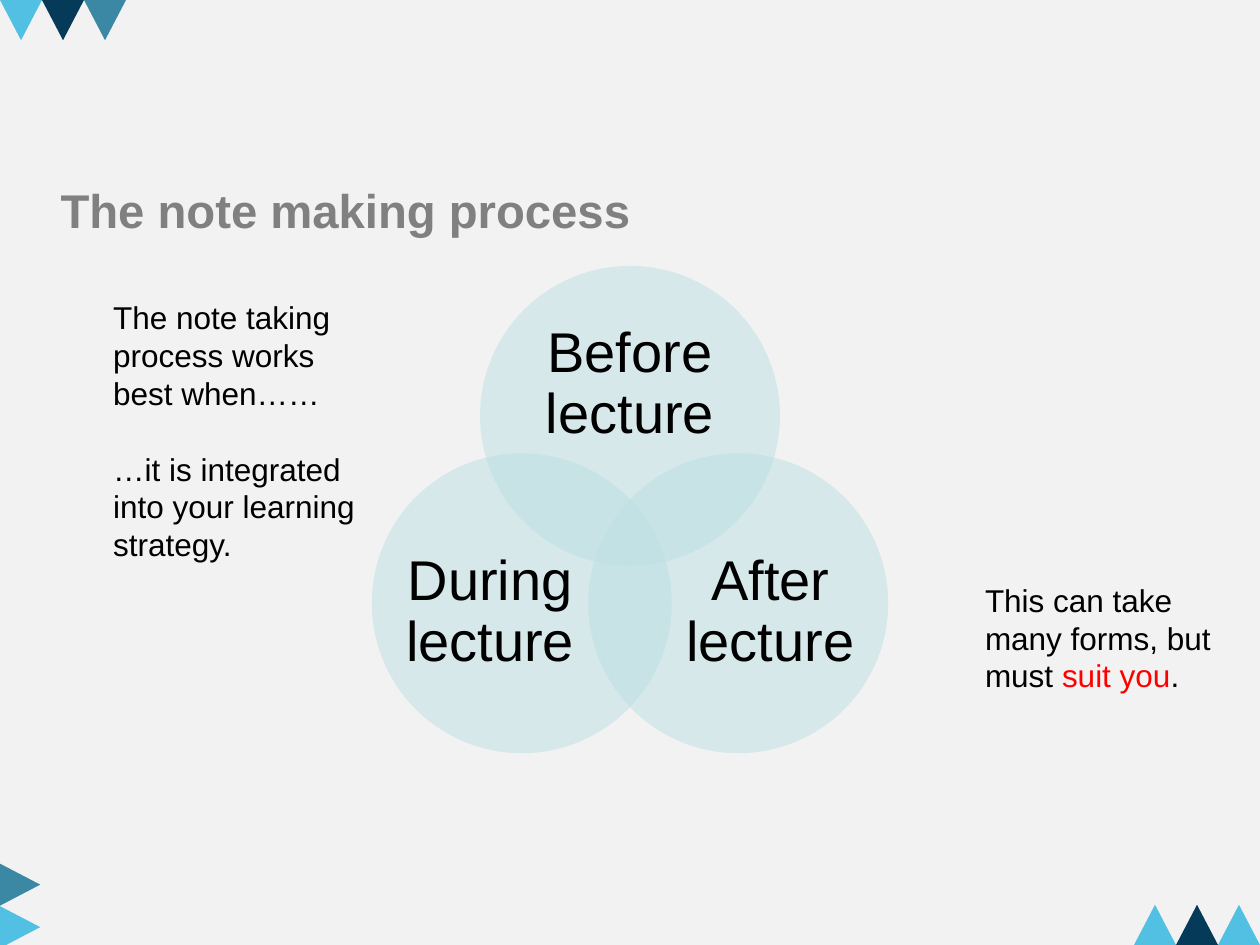
from math import cos, sin, radians
from pptx import Presentation
from pptx.util import Pt
from pptx.dml.color import RGBColor as RGB
from pptx.enum.shapes import MSO_SHAPE as Shape
from pptx.enum.text import PP_ALIGN as Align, MSO_ANCHOR as Anchor
from pptx.oxml import parse_xml
from pptx.oxml.ns import nsdecls

theme = {
    "font": "Arial", "title": 27, "label": 32, "body": 18,
    "back": "F2F2F2", "grey": "808080", "ink": "000000", "red": "FF0000",
    "teal": "3B88A5", "sky": "51C0E3", "navy": "063A59", "mint": "BBE0E3",
}


def style(item, size, color, bold=False):
    looks = {"name": theme["font"], "size": Pt(theme[size]), "bold": bold}
    for key, value in looks.items():
        setattr(item.font, key, value)
    item.font.color.rgb = RGB.from_string(theme[color])


def draw(kind, box, color):
    shape = slide.shapes.add_shape(kind, *map(Pt, box))
    shape.shadow.inherit = False
    shape.fill.solid()
    shape.fill.fore_color.rgb = RGB.from_string(theme[color])
    shape.line.fill.background()
    return shape


deck = Presentation()
deck.slide_width, deck.slide_height = Pt(720), Pt(540)
slide = deck.slides.add_slide(deck.slide_layouts[5])
slide.background.fill.solid()
slide.background.fill.fore_color.rgb = RGB.from_string(theme["back"])

# Corner triangles: first place, step, turn, colours
wide, high = 24, 23
rows = [
    (-0.5, 494, 0, 24.3, 90, ["teal", "sky"]),
    (0, 0, 24, 0, 180, ["sky", "navy", "teal"]),
    (648, 517, 24, 0, 0, ["sky", "navy", "sky"]),
]
for left, top, right, down, turn, colors in rows:
    for i, color in enumerate(colors):
        box = (left + i * right, top + i * down, wide, high)
        draw(Shape.ISOSCELES_TRIANGLE, box, color).rotation = turn

# Title
title = slide.shapes.title
place = {"left": 27.4, "top": 92.2, "width": 665.3, "height": 54.7}
for key, value in place.items():
    setattr(title, key, Pt(value))
frame = title.text_frame
frame.text = "The note making process"
frame.word_wrap = True
frame.vertical_anchor = Anchor.MIDDLE
frame.paragraphs[0].alignment = Align.LEFT
style(frame.paragraphs[0].runs[0], "title", "grey", True)

# Venn circles around a common centre, each with its label
size, reach, mid_x, mid_y = 171.4, 71.4, 360, 309
steps = [
    ("Before lecture", -90, (297.4, 181.4, 125.3, 77)),
    ("After lecture", 30, (388.8, 303.1, 102.8, 94.3)),
    ("During lecture", 150, (228.7, 303.1, 102.8, 94.3)),
]
for text, angle, box in steps:
    x = mid_x + reach * cos(radians(angle)) - size / 2
    y = mid_y + reach * sin(radians(angle)) - size / 2
    disc = draw(Shape.OVAL, (x, y, size, size), "mint")
    tint = disc.fill._xPr.find(".//{*}srgbClr")
    tint.append(parse_xml(f'<a:alpha {nsdecls("a")} val="50000"/>'))

    frame = slide.shapes.add_textbox(*map(Pt, box)).text_frame
    layout = {"word_wrap": True, "vertical_anchor": Anchor.MIDDLE,
              "margin_left": 0, "margin_right": 0,
              "margin_top": 0, "margin_bottom": 0}
    for key, value in layout.items():
        setattr(frame, key, value)
    para = frame.paragraphs[0]
    para.alignment, para.line_spacing = Align.CENTER, 0.9
    run = para.add_run()
    run.text = text
    style(run, "label", "ink")

# Side notes: box, then paragraphs of coloured runs
notes = [
    ((57.6, 167, 154, 160), [
        [("The note taking process works best when……", "ink")],
        [("…it is integrated into your learning strategy.", "ink")]]),
    ((555.8, 328.3, 154, 72.7), [
        [("This can take many forms, but must ", "ink"),
         ("suit you", "red"), (".", "ink")]]),
]
for box, paras in notes:
    frame = slide.shapes.add_textbox(*map(Pt, box)).text_frame
    frame.word_wrap = True
    for i, runs in enumerate(paras):
        para = frame.add_paragraph() if i else frame.paragraphs[0]
        if i:
            para.space_before = Pt(21.6)
        for text, color in runs:
            run = para.add_run()
            run.text = text
            style(run, "body", color)

deck.save("out.pptx")
